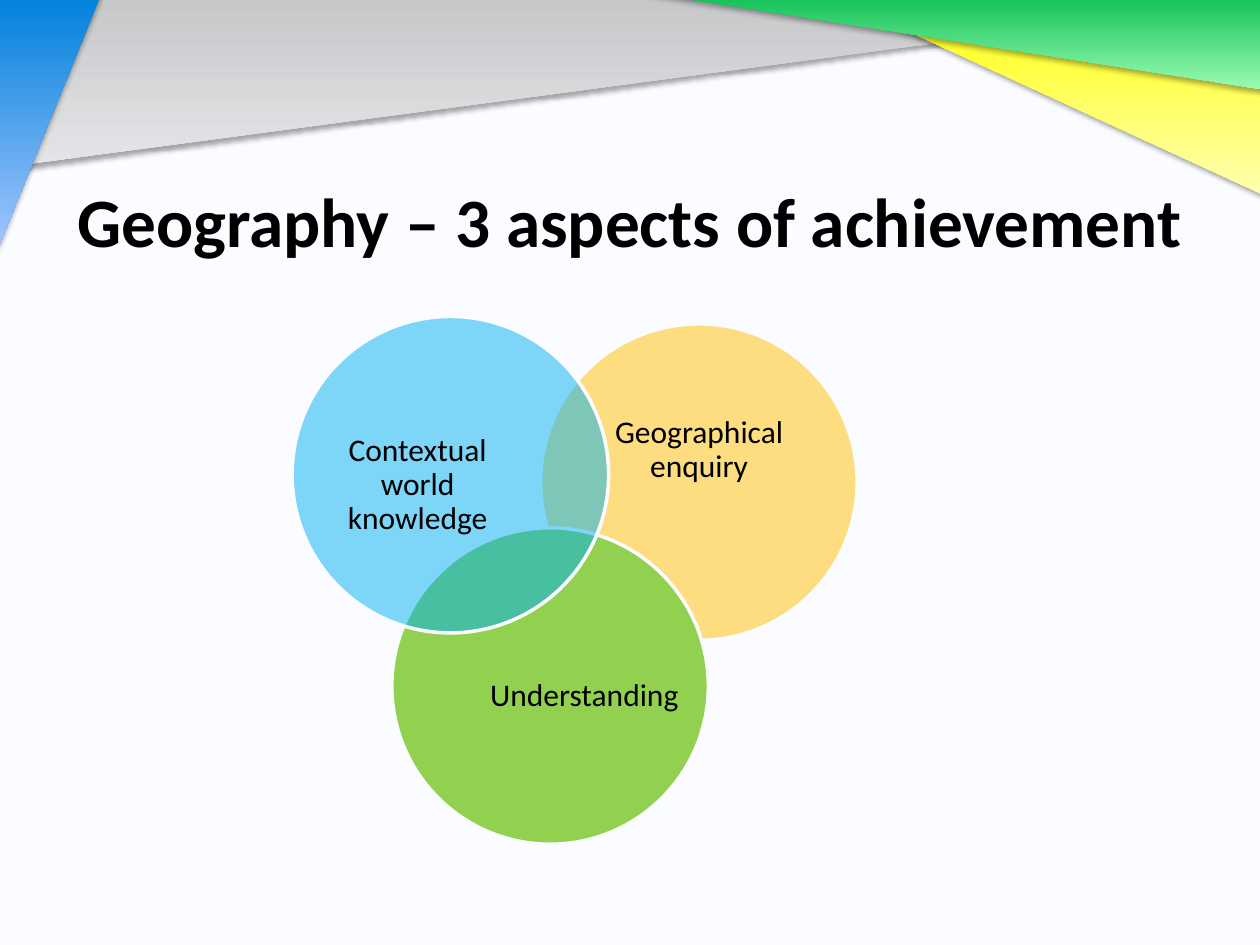
import lxml.etree
import pptx
import pptx.dml.color
import pptx.enum.dml
import pptx.enum.shapes
import pptx.enum.text
import pptx.oxml
import pptx.oxml.ns
import pptx.util

Cm = pptx.util.Cm
Pt = pptx.util.Pt
Shapes = pptx.enum.shapes.MSO_SHAPE
qn = pptx.oxml.ns.qn


def colour(code):
    return pptx.dml.color.RGBColor.from_string(code)


class VennSlide:
    font = "Calibri"
    ink = "000000"
    paper = "FBFCFF"
    diameter = 6.38

    def __init__(self, slide):
        self.slide = slide
        backdrop = slide.background.fill
        backdrop.solid()
        backdrop.fore_color.rgb = colour(self.paper)

    def ribbon(self, left, top, width, height, start, end, mirrored):
        triangle = self.slide.shapes.add_shape(
            Shapes.RIGHT_TRIANGLE, Cm(left), Cm(top), Cm(width), Cm(height))
        triangle.rotation = 180
        properties = triangle._element.spPr
        if mirrored:
            properties.find(qn("a:xfrm")).set("flipH", "1")
        triangle.fill.gradient()
        triangle.fill.gradient_angle = 90
        for stop, code in zip(triangle.fill.gradient_stops, (start, end)):
            stop.color.rgb = colour(code)
        triangle.line.fill.background()
        triangle.shadow.inherit = False
        effects = properties.find(qn("a:effectLst"))
        shade = lxml.etree.SubElement(
            effects, qn("a:outerShdw"), blurRad=str(Pt(3.1)),
            dist=str(Pt(1.8)), dir="5400000", rotWithShape="0")
        tone = lxml.etree.SubElement(shade, qn("a:srgbClr"), val=self.ink)
        lxml.etree.SubElement(tone, qn("a:alpha"), val="35000")

    def circle(self, left, top, code, opacity):
        disc = self.slide.shapes.add_shape(
            Shapes.OVAL, Cm(left), Cm(top), Cm(self.diameter), Cm(self.diameter))
        disc.shadow.inherit = False
        disc.fill.solid()
        disc.fill.fore_color.rgb = colour(code)
        if opacity < 100:
            tone = disc._element.spPr.find(qn("a:solidFill"))[0]
            lxml.etree.SubElement(tone, qn("a:alpha"), val=str(opacity * 1000))
        disc.line.color.rgb = colour(self.paper)
        disc.line.width = Pt(2)

    def text(self, left, top, width, height, words, size, bold=False, spacing=1.0):
        box = self.slide.shapes.add_textbox(Cm(left), Cm(top), Cm(width), Cm(height))
        frame = box.text_frame
        frame.word_wrap = True
        frame.vertical_anchor = pptx.enum.text.MSO_ANCHOR.MIDDLE
        frame.margin_left = frame.margin_right = 0
        frame.margin_top = frame.margin_bottom = 0
        frame.text = words
        line = frame.paragraphs[0]
        line.alignment = pptx.enum.text.PP_ALIGN.CENTER
        line.line_spacing = spacing
        style = line.runs[0].font
        style.name = self.font
        style.size = Pt(size)
        style.bold = bold
        style.color.rgb = colour(self.ink)


def main():
    deck = pptx.Presentation()
    deck.slide_width, deck.slide_height = Cm(25.4), Cm(19.05)
    venn = VennSlide(deck.slides.add_slide(deck.slide_layouts[6]))

    ribbons = [
        (0, 0, 25.4, 3.38, "C7C8CA", "E4E5E8", True),
        (-0.05, -0.1, 2.08, 5.13, "0081DA", "A2C5FF", True),
        (16.61, -0.15, 8.89, 4.09, "FFFF06", "FFFFB1", False),
        (12.7, -0.2, 12.8, 2.01, "0ABD53", "9AFCB0", False),
    ]
    for ribbon in ribbons:
        venn.ribbon(*ribbon)

    venn.text(1.27, 2.84, 22.86, 3.18, "Geography – 3 aspects of achievement", 39.6, bold=True)

    aspects = [
        ((10.9, 6.53, "FFC000", 50), (11.76, 7.65, 4.67, 2.87), "Geographical enquiry"),
        ((7.9, 10.64, "92D050", 100), (9.86, 12.29, 3.84, 3.51), "Understanding"),
        ((5.89, 6.38, "00B0F0", 50), (6.5, 8.03, 3.84, 3.51), "Contextual world knowledge"),
    ]
    for disc, label, words in aspects:
        venn.circle(*disc)
        venn.text(*label, words, 18, spacing=0.9)

    deck.save("out.pptx")


if __name__ == "__main__":
    main()
